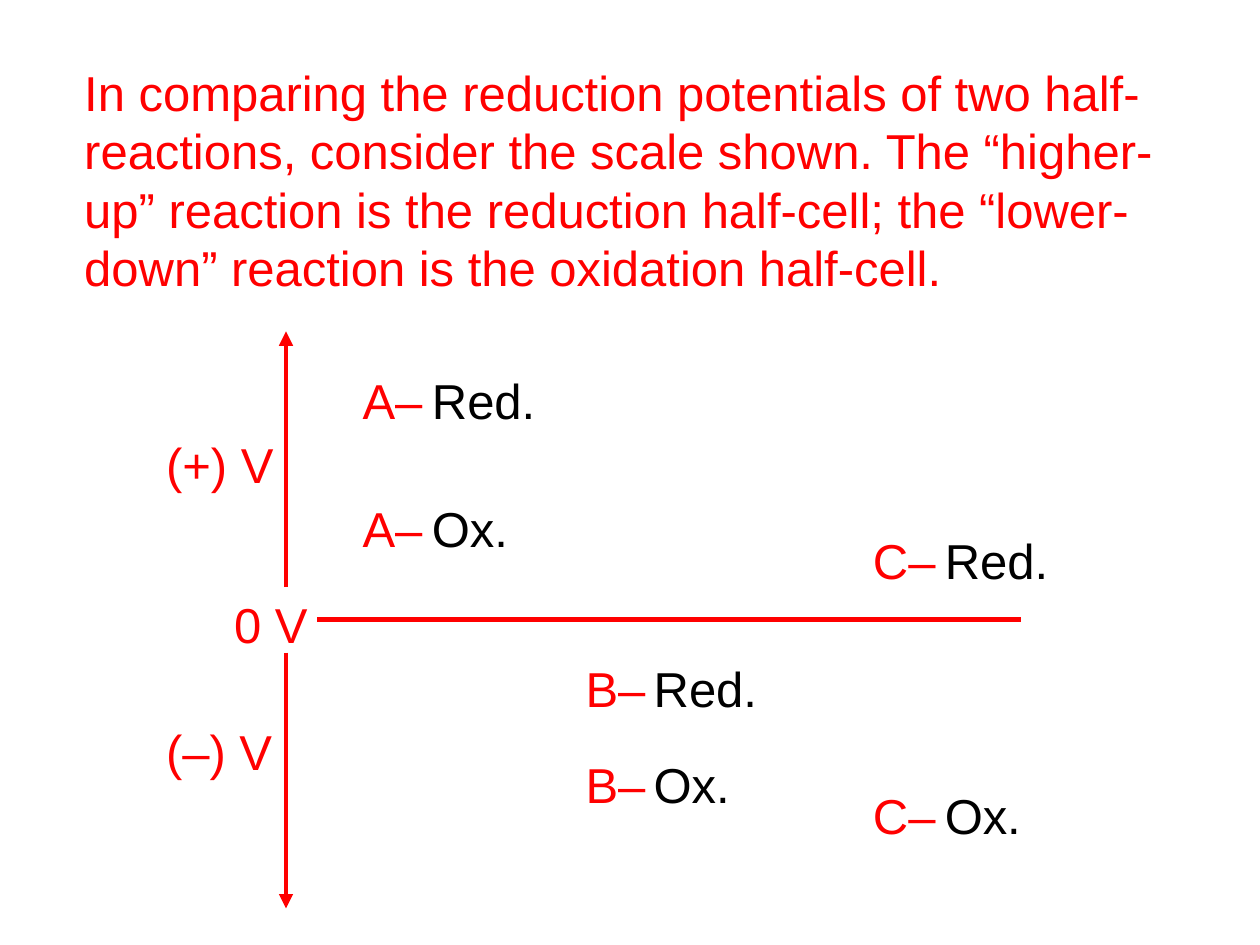
from lxml.etree import SubElement
from pptx import Presentation
from pptx.dml.color import RGBColor
from pptx.enum.shapes import MSO_CONNECTOR
from pptx.enum.text import MSO_ANCHOR
from pptx.oxml.ns import qn
from pptx.util import Inches, Pt

RED = RGBColor(0xFF, 0x00, 0x00)
BLACK = RGBColor(0x00, 0x00, 0x00)

INTRO = (
    "In comparing the reduction potentials of two half-reactions, "
    "consider the scale shown. The “higher-up” reaction is the reduction "
    "half-cell; the “lower-down” reaction is the oxidation half-cell."
)
AXIS_X = 2.27
ZERO_Y = 4.92
GAP = 0.26
REACH = 2.29

# name, left of name, left of kind, top of Red., top of Ox.
CELLS = [
    ("A–", 2.78, 3.33, 2.89, 3.91),
    ("B–", 4.55, 5.09, 5.18, 5.94),
    ("C–", 6.83, 7.4, 4.16, 6.19),
]


def add_text(slide, text, left, top, width=1.27, height=0.76,
             color=RED, size=28, anchor=MSO_ANCHOR.TOP):
    box = slide.shapes.add_textbox(
        Inches(left), Inches(top), Inches(width), Inches(height))
    frame = box.text_frame
    frame.word_wrap = True
    frame.vertical_anchor = anchor
    para = frame.paragraphs[0]
    para.line_spacing = Pt(33.5)
    run = para.add_run()
    run.text = text
    run.font.name = "Arial"
    run.font.size = Pt(size)
    run.font.color.rgb = color


def add_line(slide, x1, y1, x2, y2, arrow=False):
    line = slide.shapes.add_connector(
        MSO_CONNECTOR.STRAIGHT,
        Inches(x1), Inches(y1), Inches(x2), Inches(y2))
    line.line.color.rgb = RED
    line.line.width = Pt(2.75)
    if arrow:
        SubElement(line.line._get_or_add_ln(), qn("a:tailEnd"),
                   type="triangle")
    SubElement(line._element.spPr, qn("a:effectLst"))


def add_scale(slide):
    add_text(slide, "0 V", 1.76, 4.67)
    add_text(slide, "(+) V", 1.22, 3.4)
    add_text(slide, "(–) V", 1.22, 5.68)
    add_line(slide, 2.52, ZERO_Y, 8.1, ZERO_Y)
    for sign in (-1, 1):
        add_line(slide, AXIS_X, ZERO_Y + sign * GAP,
                 AXIS_X, ZERO_Y + sign * REACH, arrow=True)


def add_cell(slide, name, left, kind_left, red_top, ox_top):
    for kind, top in (("Red.", red_top), ("Ox.", ox_top)):
        add_text(slide, name, left, top)
        add_text(slide, kind, kind_left, top, color=BLACK)


def main():
    deck = Presentation()
    deck.slide_width, deck.slide_height = Inches(10), Inches(7.5)
    slide = deck.slides.add_slide(deck.slide_layouts[6])
    add_text(slide, INTRO, 0.57, 0.44, 9.09, 1.97,
             anchor=MSO_ANCHOR.MIDDLE)
    add_scale(slide)
    for cell in CELLS:
        add_cell(slide, *cell)
    deck.save("out.pptx")


if __name__ == "__main__":
    main()
